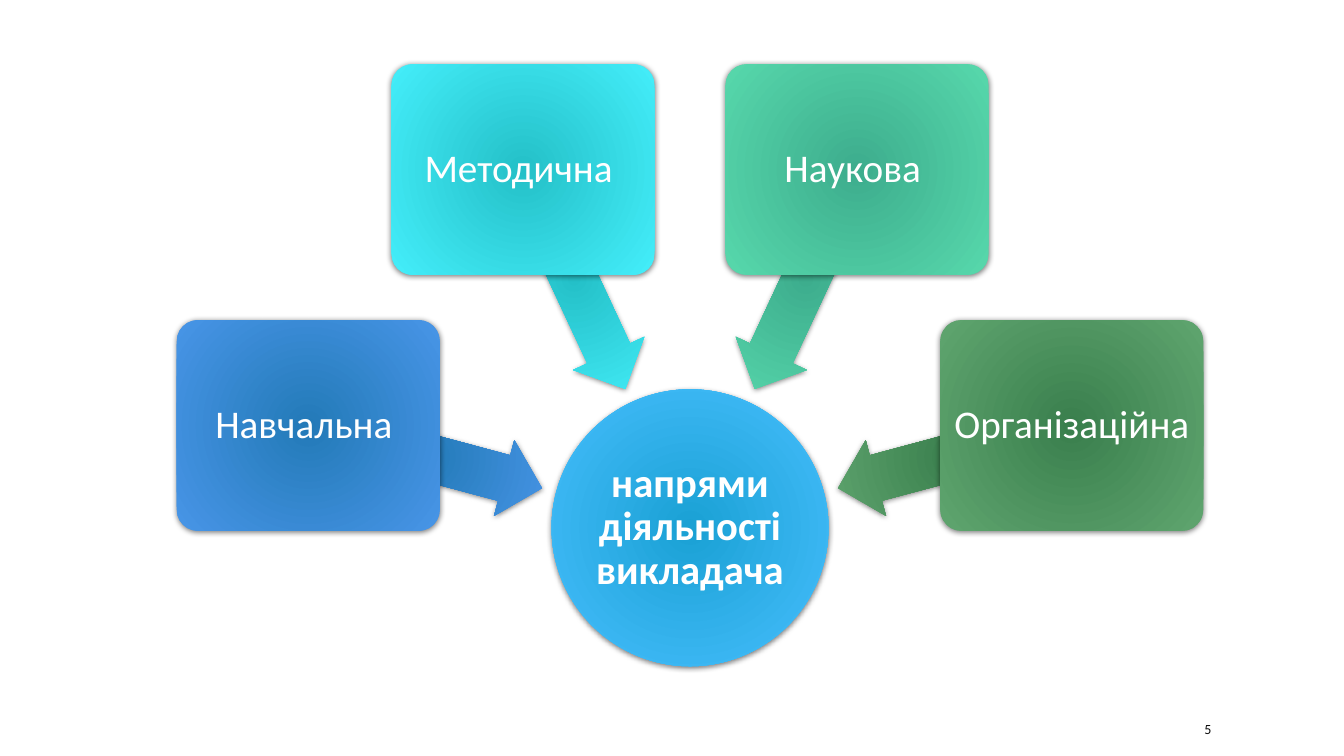
from math import cos, radians, sin

from lxml.etree import SubElement
from pptx import Presentation
from pptx.dml.color import RGBColor
from pptx.enum.shapes import MSO_SHAPE as Shape
from pptx.enum.text import MSO_ANCHOR as Anchor, PP_ALIGN as Align
from pptx.oxml.ns import qn
from pptx.util import Cm, Pt

WHITE = RGBColor(0xFF, 0xFF, 0xFF)
INK = RGBColor(0x0D, 0x0D, 0x0D)
BLACK = RGBColor(0x00, 0x00, 0x00)
SKY = RGBColor(0x1A, 0xA1, 0xD4), RGBColor(0x48, 0xBF, 0xFF)
BLUE = RGBColor(0x23, 0x7A, 0xB8), RGBColor(0x48, 0x95, 0xE7)
CYAN = RGBColor(0x24, 0xC0, 0xC8), RGBColor(0x44, 0xEE, 0xFA)
MINT = RGBColor(0x3D, 0xAD, 0x8D), RGBColor(0x57, 0xD8, 0xAC)
GREEN = RGBColor(0x3A, 0x7F, 0x4D), RGBColor(0x5F, 0xA5, 0x6F)

# Hub and orbit geometry, in centimetres and degrees
HUB_X, HUB_Y, HUB_SIZE = 17.39, 13.3, 6.98
CARD_RADIUS, ARROW_RADIUS = 9.96, 6.91
CARD_WIDTH, CARD_HEIGHT = 6.63, 5.31
ARROW_WIDTH, ARROW_HEIGHT = 6.1, 1.98
FIRST_ANGLE, ANGLE_STEP = 195, 50

DIRECTIONS = [
    ("Навчальна ", BLUE),
    ("Методична ", CYAN),
    ("Наукова ", MINT),
    ("Організаційна ", GREEN),
]


def write(box, text, size=28, color=WHITE, bold=False, align=Align.CENTER,
          spacing=0.9, inset=None):
    frame = box.text_frame
    frame.word_wrap = True
    frame.vertical_anchor = Anchor.MIDDLE
    if inset is not None:
        frame.margin_left = frame.margin_right = Cm(inset)
        frame.margin_top = frame.margin_bottom = Cm(inset)
    para = frame.paragraphs[0]
    para.alignment = align
    para.line_spacing = spacing
    span = para.add_run()
    span.text = text
    span.font.name = "Calibri"
    span.font.size = Pt(size)
    span.font.bold = bold
    span.font.color.rgb = color


def orbit(radius, angle):
    return (HUB_X + radius * cos(radians(angle)),
            HUB_Y + radius * sin(radians(angle)))


class Diagram:
    def __init__(self, page):
        self.page = page

    def glow(self, box, colors):
        """Radial gradient from the centre outwards, with a soft shadow."""
        box.fill.gradient()
        properties = box._element.spPr
        gradient = properties.find(qn("a:gradFill"))
        gradient.remove(gradient.find(qn("a:lin")))
        circle = SubElement(gradient, qn("a:path"), path="circle")
        SubElement(circle, qn("a:fillToRect"),
                   {side: "100000" for side in "ltrb"})
        for stop, place, color in zip(box.fill.gradient_stops, (0, 1), colors):
            stop.position = place
            stop.color.rgb = color
        box.line.fill.background()
        box.shadow.inherit = False
        shadow = SubElement(properties.find(qn("a:effectLst")),
                            qn("a:outerShdw"), blurRad=str(Pt(4)),
                            dist=str(Pt(1)), dir=str(90 * 60000),
                            rotWithShape="0")
        tint = SubElement(shadow, qn("a:srgbClr"), val=str(BLACK))
        SubElement(tint, qn("a:alpha"), val="50000")

    def shape(self, kind, center, width, height, colors, adjustments=()):
        x, y = center
        box = self.page.shapes.add_shape(
            kind, Cm(x - width / 2), Cm(y - height / 2), Cm(width), Cm(height))
        for index, value in enumerate(adjustments):
            box.adjustments[index] = value
        self.glow(box, colors)
        return box

    def hub(self, text):
        box = self.shape(Shape.OVAL, (HUB_X, HUB_Y), HUB_SIZE, HUB_SIZE, SKY)
        write(box, text, size=29, bold=True, inset=0.05)

    def arrow(self, angle, colors):
        box = self.shape(Shape.LEFT_ARROW, orbit(ARROW_RADIUS, angle),
                         ARROW_WIDTH, ARROW_HEIGHT, colors, (0.6, 0.5))
        box.rotation = angle

    def card(self, text, angle, colors):
        box = self.shape(Shape.ROUNDED_RECTANGLE, orbit(CARD_RADIUS, angle),
                         CARD_WIDTH, CARD_HEIGHT, colors, (0.1,))
        write(box, text, inset=0.16)

    def page_number(self, text):
        box = self.page.shapes.add_textbox(
            Cm(30.1), Cm(17.98), Cm(2.69), Cm(0.76))
        write(box, text, size=10, color=INK, align=Align.LEFT, spacing=1.0)


def main():
    deck = Presentation()
    deck.slide_width, deck.slide_height = Cm(33.87), Cm(19.05)
    diagram = Diagram(deck.slides.add_slide(deck.slide_layouts[6]))

    diagram.page_number("5")
    diagram.hub("напрями діяльності викладача ")

    # Each card covers the tail of its arrow
    for index, (name, colors) in enumerate(DIRECTIONS):
        angle = FIRST_ANGLE + index * ANGLE_STEP
        diagram.arrow(angle, colors)
        diagram.card(name, angle, colors)

    deck.save("out.pptx")


if __name__ == "__main__":
    main()
